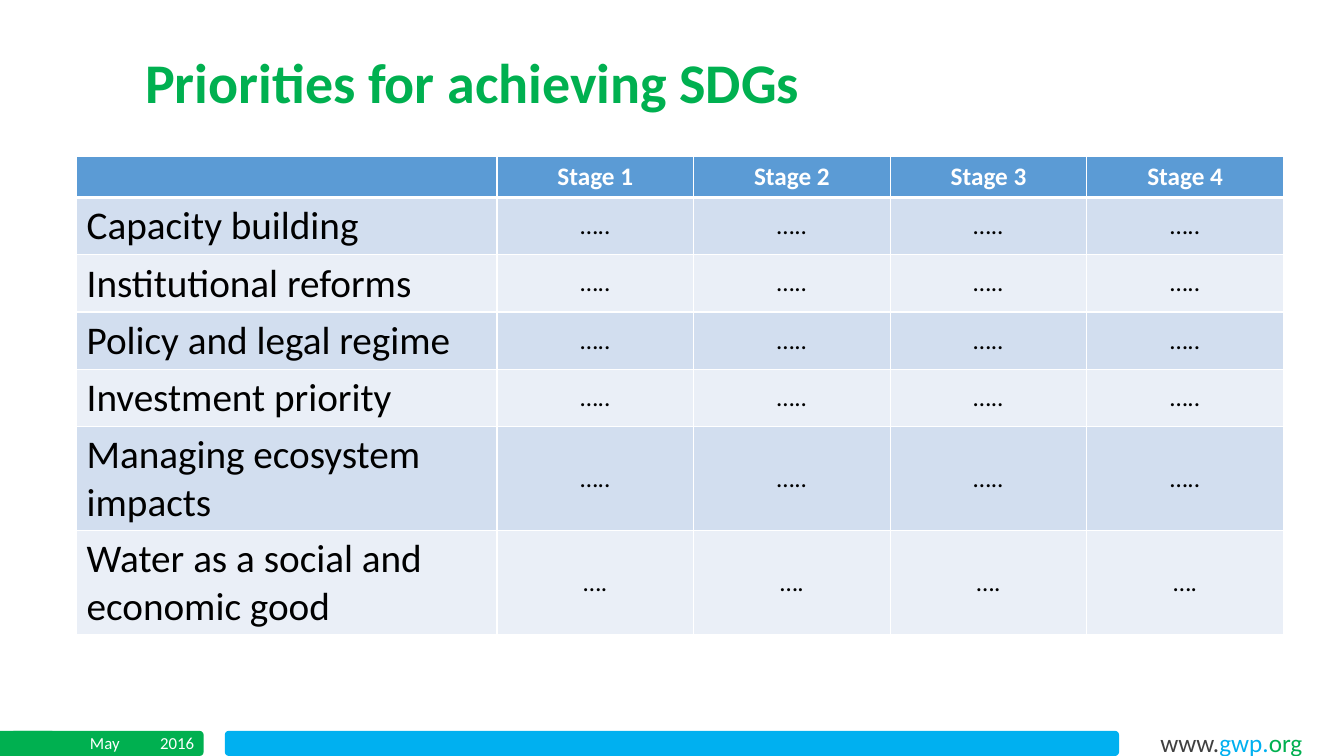
from lxml import etree
from pptx import Presentation
from pptx.dml.color import RGBColor
from pptx.enum import shapes, text
from pptx.oxml import ns
from pptx.util import Inches, Pt

# Content
TITLE = "Priorities for achieving SDGs"
STAGES = ["Stage 1", "Stage 2", "Stage 3", "Stage 4"]
PRIORITIES = [
    ("Capacity building", "….."),
    ("Institutional reforms", "….."),
    ("Policy and legal regime", "….."),
    ("Investment priority", "….."),
    ("Managing ecosystem impacts", "….."),
    ("Water as a social and economic good", "…."),
]
COLORS = {"green": "00B050", "blue": "00B0F0", "grey": "404040", "white": "FFFFFF",
          "black": "000000", "header": "5B9BD5", "odd": "D2DEEF", "even": "EAEFF7"}
WEBSITE = [("www.", "grey"), ("gwp.", "blue"), ("org", "green")]

# Geometry in inches
SLIDE_W, SLIDE_H = 13.33, 7.5
BAR_H = 0.25
BAR_TOP = SLIDE_H - BAR_H
TITLE_BOX = (1.34, 0.5, 9.04, 0.71)
TABLE_LEFT, TABLE_TOP, ROW_H = 0.76, 1.55, 0.41
COLUMNS = [4.17] + [1.95] * len(STAGES)
ROUND, RECT = shapes.MSO_SHAPE.ROUNDED_RECTANGLE, shapes.MSO_SHAPE.RECTANGLE
BARS = [
    (ROUND, (0.1, BAR_TOP, 1.92, BAR_H), "green"),
    (ROUND, (2.23, BAR_TOP, 8.87, BAR_H), "blue"),
    (RECT, (0, BAR_TOP, 0.52, BAR_H), "green"),
]
WEBSITE_BOX = (11.41, 7.12, 1.64, 0.38)
LEFT, CENTER = text.PP_ALIGN.LEFT, text.PP_ALIGN.CENTER
DATE = [("May", (0.52, 7.22, 1.04, 0.3), CENTER), ("2016", (1.49, 7.22, 0.58, 0.3), LEFT)]


def rgb(color):
    return RGBColor.from_string(COLORS[color])


def inches(box):
    return [Inches(length) for length in box]


def write(paragraph, words, size, color, bold=False, **layout):
    run = paragraph.add_run()
    run.text = words
    for key, value in {"name": "Calibri", "size": Pt(size), "bold": bold}.items():
        setattr(run.font, key, value)
    run.font.color.rgb = rgb(color)
    for key, value in layout.items():
        setattr(paragraph, key, value)


def add_block(slide, outline, box, color):
    block = slide.shapes.add_shape(outline, *inches(box))
    block.shadow.inherit = False
    block.fill.solid()
    block.fill.fore_color.rgb = rgb(color)
    block.line.fill.background()
    return block


def add_borders(cell, widths):
    properties = cell._tc.get_or_add_tcPr()
    for position, (side, width) in enumerate(widths.items()):
        line = etree.Element(ns.qn(f"a:ln{side}"), w=str(Pt(width)))
        fill = etree.SubElement(line, ns.qn("a:solidFill"))
        etree.SubElement(fill, ns.qn("a:srgbClr"), val=COLORS["white"])
        properties.insert(position, line)


def add_footer(slide):
    for outline, box, color in BARS:
        add_block(slide, outline, box, color)
    website = add_block(slide, RECT, WEBSITE_BOX, "white").text_frame
    website.vertical_anchor = text.MSO_ANCHOR.TOP
    for words, color in WEBSITE:
        write(website.paragraphs[0], words, 18, color,
              alignment=LEFT, line_spacing=1.15, space_after=Pt(10))
    for words, box, alignment in DATE:
        date = slide.shapes.add_textbox(*inches(box)).text_frame
        date.word_wrap = True
        write(date.paragraphs[0], words, 12, "white", alignment=alignment)


def add_title(slide):
    title = slide.shapes.title
    title.left, title.top, title.width, title.height = inches(TITLE_BOX)
    title.text_frame.vertical_anchor = text.MSO_ANCHOR.TOP
    write(title.text_frame.paragraphs[0], TITLE, 40, "green", bold=True,
          alignment=LEFT, line_spacing=0.9)


def add_priorities(slide):
    rows = [["", *STAGES]] + [[name] + [dots] * len(STAGES) for name, dots in PRIORITIES]
    frame = slide.shapes.add_table(
        len(rows), len(COLUMNS),
        *inches((TABLE_LEFT, TABLE_TOP, sum(COLUMNS), ROW_H * len(rows))))
    table = frame.table
    for column, width in zip(table.columns, COLUMNS):
        column.width = Inches(width)
    for r, row in enumerate(rows):
        table.rows[r].height = Inches(ROW_H)
        header = r == 0
        for c, words in enumerate(row):
            cell = table.cell(r, c)
            cell.fill.solid()
            cell.fill.fore_color.rgb = rgb("header" if header else "odd" if r % 2 else "even")
            # The rule under the header is thicker than the others
            add_borders(cell, {"L": 1, "R": 1, "T": 3 if r == 1 else 1, "B": 3 if header else 1})
            if c and not header:
                cell.vertical_anchor = text.MSO_ANCHOR.MIDDLE
            if words:
                write(cell.text_frame.paragraphs[0], words, 18 if c else 28,
                      "white" if header else "black", bold=header,
                      alignment=CENTER if c else LEFT)


def main():
    deck = Presentation()
    deck.slide_width, deck.slide_height = Inches(SLIDE_W), Inches(SLIDE_H)
    slide = deck.slides.add_slide(deck.slide_layouts.get_by_name("Title Only"))
    add_footer(slide)
    add_title(slide)
    add_priorities(slide)
    deck.save("out.pptx")


if __name__ == "__main__":
    main()
